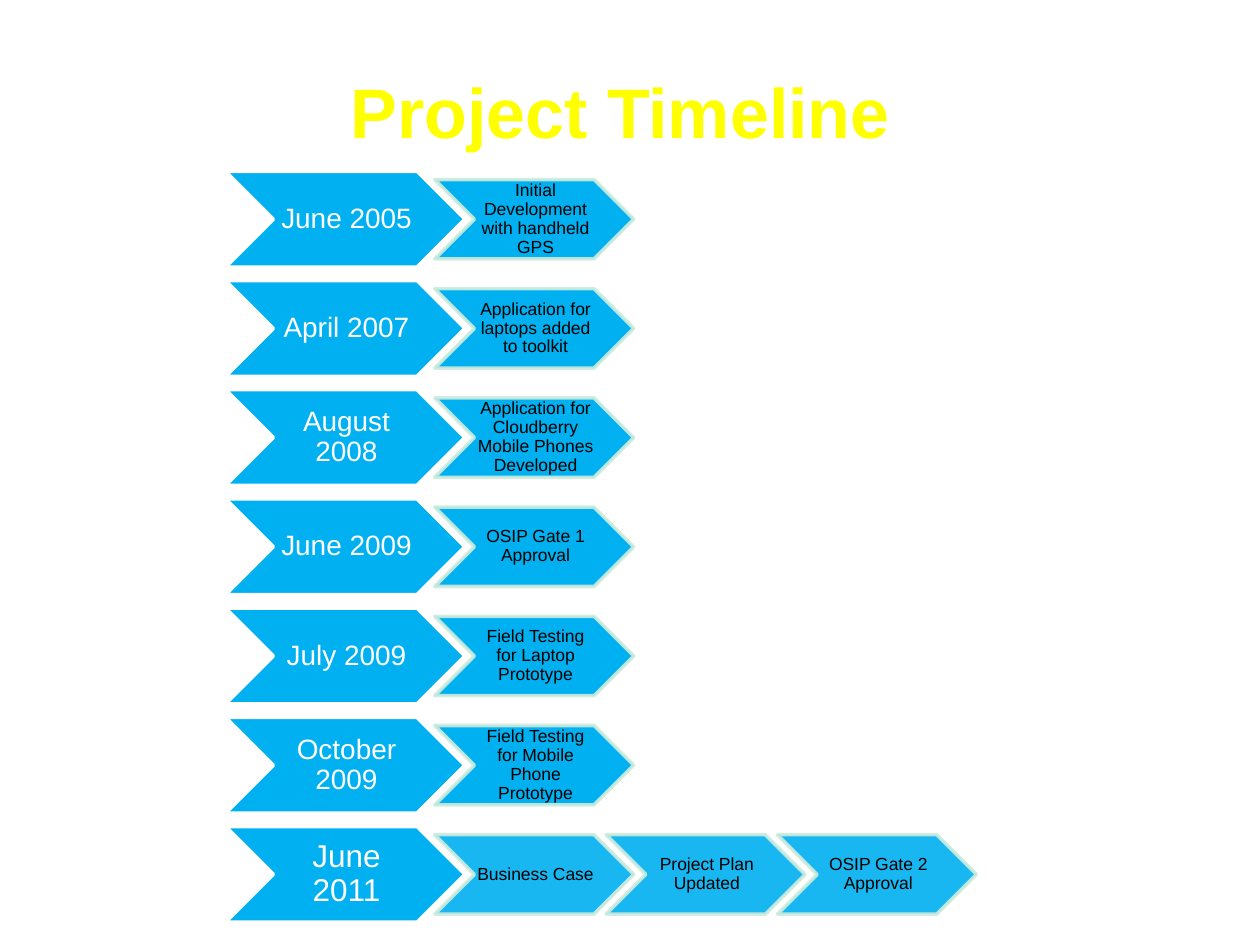
from dataclasses import dataclass

from lxml.etree import SubElement
from pptx import Presentation
from pptx.dml.color import RGBColor
from pptx.enum.shapes import MSO_SHAPE
from pptx.enum.text import MSO_ANCHOR, PP_ALIGN
from pptx.oxml.ns import qn
from pptx.util import Inches, Pt


@dataclass(frozen=True)
class Theme:
    """Colours and type sizes of the deck."""
    font: str = "Arial"
    title: RGBColor = RGBColor(0xFF, 0xFF, 0x00)
    blue: RGBColor = RGBColor(0x00, 0xB0, 0xF0)
    mint: RGBColor = RGBColor(0xCC, 0xEC, 0xDE)
    white: RGBColor = RGBColor(0xFF, 0xFF, 0xFF)
    black: RGBColor = RGBColor(0x00, 0x00, 0x00)
    title_size: int = 40
    date_size: int = 16
    final_date_size: int = 18
    step_size: int = 10


THEME = Theme()
MILESTONES = [
    ("June 2005", ["Initial Development with handheld GPS"]),
    ("April 2007", ["Application for laptops added to toolkit"]),
    ("August 2008", ["Application for Cloudberry Mobile Phones Developed"]),
    ("June 2009", ["OSIP Gate 1 Approval"]),
    ("July 2009", ["Field Testing for Laptop Prototype"]),
    ("October 2009", ["Field Testing for Mobile Phone Prototype"]),
    ("June 2011", ["Business Case", "Project Plan Updated", "OSIP Gate 2 Approval"]),
]


def write_text(shape, text, size, color, bold=False):
    """Write one centred paragraph into a shape and return it."""
    frame = shape.text_frame
    frame.word_wrap = True
    frame.vertical_anchor = MSO_ANCHOR.MIDDLE
    para = frame.paragraphs[0]
    para.text = text
    para.alignment = PP_ALIGN.CENTER
    para.font.name = THEME.font
    para.font.size = Pt(size)
    para.font.bold = bold
    para.font.color.rgb = color
    return para


def set_alpha(color_format, percent):
    """Make a solid fill partly transparent."""
    color = color_format._xPr.find(qn("a:solidFill"))[0]
    SubElement(color, qn("a:alpha"), val=str(percent * 1000))


def add_title(page, left, top, width, height):
    """Add the heading with its hard black shadow."""
    box = page.shapes.add_textbox(left, top, width, height)
    para = write_text(box, "Project Timeline ", THEME.title_size, THEME.title, bold=True)
    properties = para.runs[0]._r.get_or_add_rPr()
    effects = SubElement(properties, qn("a:effectLst"))
    shadow = SubElement(effects, qn("a:outerShdw"), dist="38100", dir="2700000")
    SubElement(shadow, qn("a:srgbClr"), val=str(THEME.black))


def add_chevron(page, left, top, width, height, text, size, color, outline):
    """Add a labelled blue chevron."""
    chevron = page.shapes.add_shape(MSO_SHAPE.CHEVRON, left, top, width, height)
    chevron.shadow.inherit = False
    chevron.fill.solid()
    chevron.fill.fore_color.rgb = THEME.blue
    chevron.line.color.rgb = outline
    chevron.line.width = Pt(2)
    frame = chevron.text_frame
    frame.margin_left = Inches(0.02)
    frame.margin_right = 0
    frame.margin_top = frame.margin_bottom = Inches(0.01)
    write_text(chevron, text, size, color).line_spacing = 0.9
    return chevron


def add_milestone(page, left, top, date, steps, final):
    """Add one row: a date chevron followed by its steps."""
    date_height, step_height = Inches(0.76), Inches(0.63)
    date_size = THEME.final_date_size if final else THEME.date_size
    add_chevron(page, left, top, Inches(1.9), date_height,
                date, date_size, THEME.white, THEME.white)
    step_top = top + (date_height - step_height) // 2
    for index, step in enumerate(steps):
        step_left = left + Inches(1.66) + index * Inches(1.36)
        chevron = add_chevron(page, step_left, step_top, Inches(1.58), step_height,
                              step, THEME.step_size, THEME.black, THEME.mint)
        set_alpha(chevron.line.fill, 90)
        if final:
            set_alpha(chevron.fill, 90)


def add_timeline(page, left, top, height):
    """Stack the milestone rows evenly within the height."""
    last = len(MILESTONES) - 1
    pitch = (height - Inches(0.76)) // last
    for index, (date, steps) in enumerate(MILESTONES):
        add_milestone(page, left, top + index * pitch, date, steps, index == last)


def main():
    """Build and save the deck."""
    deck = Presentation()
    deck.slide_width, deck.slide_height = Inches(10), Inches(7.5)
    page = deck.slides.add_slide(deck.slide_layouts[6])
    add_title(page, Inches(0.75), Inches(0.25), Inches(8.5), Inches(1.25))
    add_timeline(page, Inches(1.79), Inches(1.36), Inches(5.96))
    deck.save("out.pptx")


if __name__ == "__main__":
    main()
